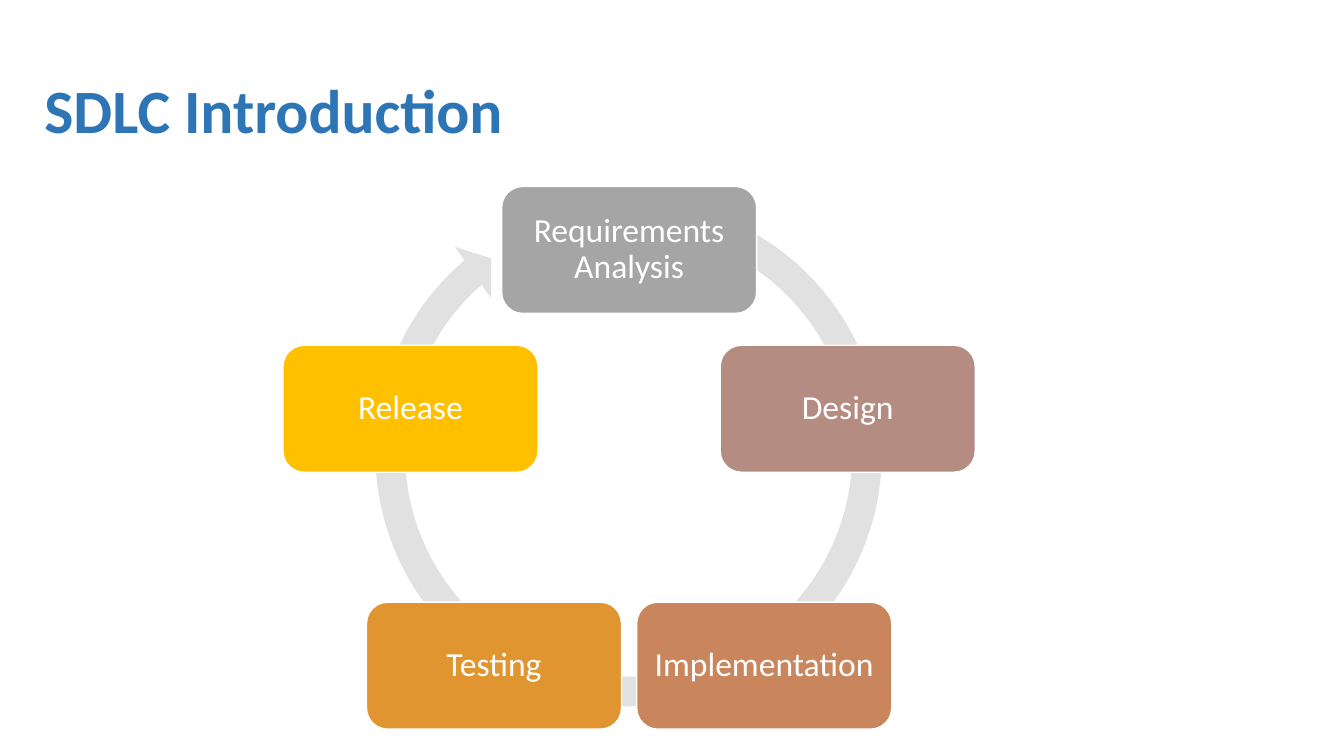
from math import cos, pi, sin

from pptx import Presentation
from pptx.dml.color import RGBColor
from pptx.enum.shapes import MSO_SHAPE
from pptx.enum.text import MSO_ANCHOR, PP_ALIGN
from pptx.util import Inches, Pt

TITLE = "SDLC Introduction"
PHASES = [  # clockwise from the top
    ("Requirements Analysis", "A5A5A5"),
    ("Design", "B48C82"),
    ("Implementation", "C9865C"),
    ("Testing", "E19530"),
    ("Release", "FFC000"),
]
FONT = "Calibri"
CENTER_X, CENTER_Y, RADIUS = 6.24, 4.76, 2.28
BOX_W, BOX_H = 2.53, 1.26
RING_LEFT, RING_TOP, RING_SIZE = 3.56, 1.82, 5.35
RING_ADJUSTMENTS = (0.055, 3.307, 137.567, 173.977, 0.058)


def color(value):
    return RGBColor.from_string(value)


def add_text(tf, text, size, hex_color, align, bold=False):
    tf.word_wrap = True
    tf.vertical_anchor = MSO_ANCHOR.MIDDLE
    p = tf.paragraphs[0]
    p.alignment = align
    p.line_spacing = 0.9
    r = p.add_run()
    r.text = text
    r.font.name = FONT
    r.font.size = Pt(size)
    r.font.bold = bold
    r.font.color.rgb = color(hex_color)


def add_shape(s, kind, left, top, width, height, fill):
    sp = s.shapes.add_shape(kind, Inches(left), Inches(top), Inches(width), Inches(height))
    sp.shadow.inherit = False
    sp.fill.solid()
    sp.fill.fore_color.rgb = color(fill)
    sp.line.fill.background()
    return sp


def add_ring(s):
    ring = add_shape(s, MSO_SHAPE.CIRCULAR_ARROW, RING_LEFT, RING_TOP,
                     RING_SIZE, RING_SIZE, "E1E1E1")
    for i, value in enumerate(RING_ADJUSTMENTS):
        ring.adjustments[i] = value


def add_phase(s, index, name, fill):
    angle = 2 * pi * index / len(PHASES)
    left = CENTER_X + RADIUS * sin(angle) - BOX_W / 2
    top = CENTER_Y - RADIUS * cos(angle) - BOX_H / 2
    box = add_shape(s, MSO_SHAPE.ROUNDED_RECTANGLE, left, top, BOX_W, BOX_H, fill)
    box.line.color.rgb = color("FFFFFF")
    box.line.width = Pt(1)
    tf = box.text_frame
    tf.margin_left = tf.margin_right = tf.margin_top = tf.margin_bottom = Inches(0.1)
    add_text(tf, name, 24, "FFFFFF", PP_ALIGN.CENTER)


def main():
    prs = Presentation()
    prs.slide_width, prs.slide_height = Inches(13.33), Inches(7.5)
    s = prs.slides.add_slide(prs.slide_layouts[5])

    title = s.shapes.title
    title.left, title.top = Inches(0.34), Inches(0.4)
    title.width, title.height = Inches(12.68), Inches(1.45)
    add_text(title.text_frame, TITLE, 44, "2E75B6", PP_ALIGN.LEFT, bold=True)

    add_ring(s)
    for index, (name, fill) in enumerate(PHASES):
        add_phase(s, index, name, fill)
    prs.save("out.pptx")


if __name__ == "__main__":
    main()
